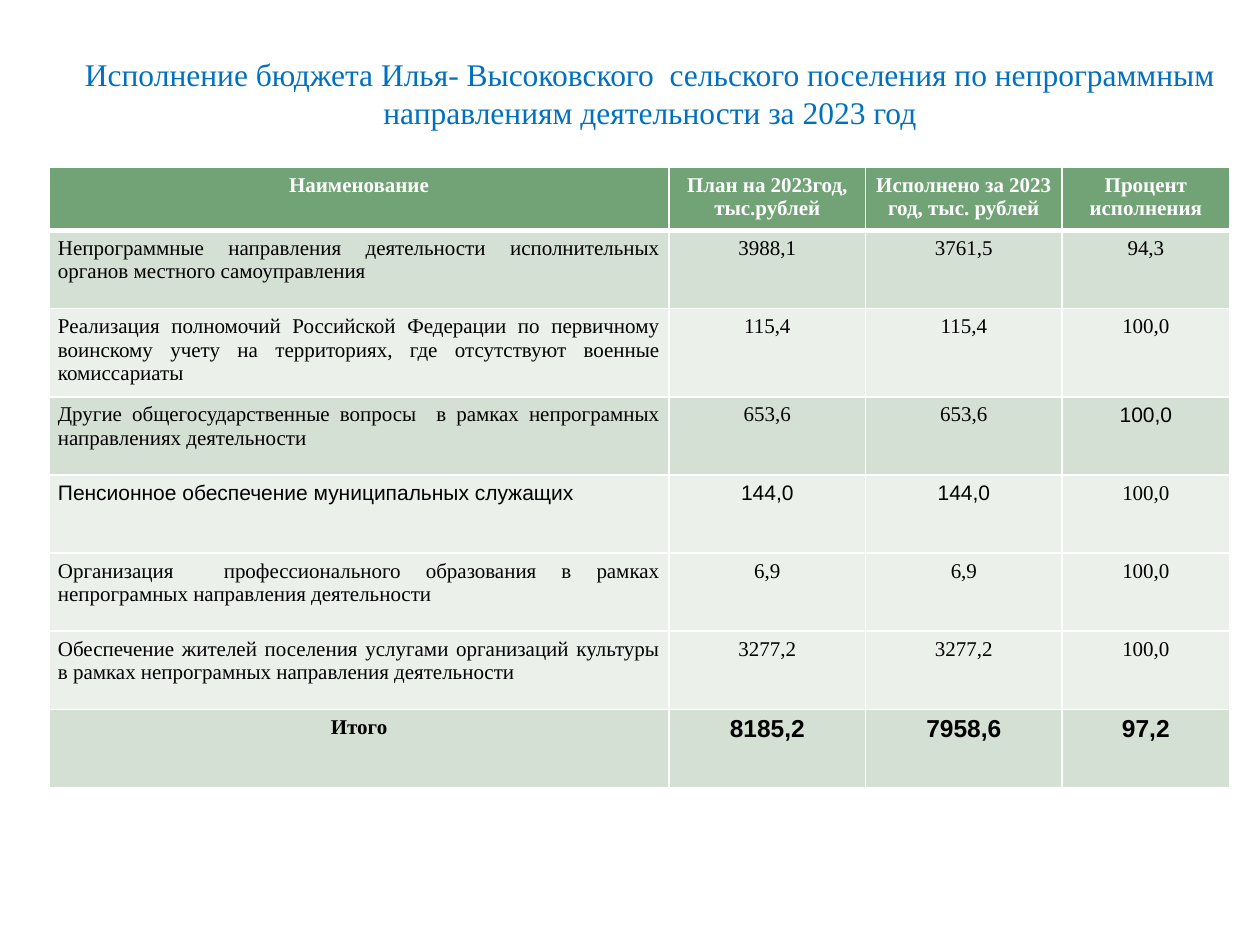
from dataclasses import dataclass

from lxml import etree
from pptx import Presentation
from pptx.dml.color import RGBColor
from pptx.enum.text import MSO_ANCHOR, PP_ALIGN
from pptx.oxml.ns import qn
from pptx.util import Inches, Pt


@dataclass(frozen=True)
class Theme:
    serif: str = "Times New Roman"
    sans: str = "Arial"
    title_size: int = 18
    body_size: int = 12
    total_size: int = 14
    title: str = "0070C0"
    text: str = "000000"
    white: str = "FFFFFF"
    header: str = "72A376"
    dark_band: str = "D5E0D5"
    light_band: str = "EBF0EB"
    grid_width: float = 0.96
    header_rule: float = 3


THEME = Theme()

TITLE = ("Исполнение бюджета Илья- Высоковского  сельского поселения "
         "по непрограммным направлениям деятельности за 2023 год")
HEADER = ("Наименование", "План на 2023год,\nтыс.рублей",
          "Исполнено за 2023 год, тыс. рублей", "Процент исполнения")
ITEMS = [
    ("Непрограммные направления деятельности исполнительных органов "
     "местного самоуправления", "3988,1", "3761,5", "94,3"),
    ("Реализация полномочий Российской Федерации по первичному воинскому учету "
     "на территориях, где отсутствуют военные комиссариаты",
     "115,4", "115,4", "100,0"),
    ("Другие общегосударственные вопросы  в рамках непрограмных "
     "направлениях деятельности", "653,6", "653,6", "100,0"),
    ("Пенсионное обеспечение муниципальных служащих", "144,0", "144,0", "100,0"),
    ("Организация  профессионального образования в рамках непрограмных "
     "направления деятельности ", "6,9", "6,9", "100,0"),
    ("Обеспечение жителей поселения услугами организаций культуры в рамках "
     "непрограмных направления деятельности ", "3277,2", "3277,2", "100,0"),
]
TOTAL = ("Итого", "8185,2", "7958,6", "97,2")
ROWS = [HEADER, *ITEMS, TOTAL]
LAST = len(ROWS) - 1
DARK_ROWS = {1, 3, LAST}
SANS_CELLS = {(3, 3), (4, 0), (4, 1), (4, 2), (LAST, 1), (LAST, 2), (LAST, 3)}

COLUMN_WIDTHS = (4.92, 1.56, 1.56, 1.33)
HEADER_HEIGHT, ROW_HEIGHT = 0.4, 0.62


def write(frame, text, *, size=THEME.body_size, font=THEME.serif,
          color=THEME.text, bold=False, align=PP_ALIGN.CENTER):
    """Fill a text frame, one paragraph for each line of text."""
    frame.word_wrap = True
    for index, line in enumerate(text.split("\n")):
        paragraph = frame.paragraphs[0] if index == 0 else frame.add_paragraph()
        paragraph.alignment = align
        run = paragraph.add_run()
        run.text = line
        run.font.size = Pt(size)
        run.font.name = font
        run.font.bold = bold
        run.font.color.rgb = RGBColor.from_string(color)


def set_borders(cell, top, bottom):
    """Draw white cell borders; they must come before the fill in tcPr."""
    widths = {"lnL": THEME.grid_width, "lnR": THEME.grid_width,
              "lnT": top, "lnB": bottom}
    properties = cell._tc.get_or_add_tcPr()
    for position, (side, width) in enumerate(widths.items()):
        line = etree.Element(qn(f"a:{side}"), w=str(int(Pt(width))))
        fill = etree.SubElement(line, qn("a:solidFill"))
        etree.SubElement(fill, qn("a:srgbClr"), val=THEME.white)
        properties.insert(position, line)


def cell_format(row, column):
    if row == 0:
        return {"color": THEME.white, "bold": True}
    return {
        "font": THEME.sans if (row, column) in SANS_CELLS else THEME.serif,
        "size": THEME.total_size if row == LAST and column else THEME.body_size,
        "bold": row == LAST,
        "align": PP_ALIGN.JUSTIFY if column == 0 and row < LAST else PP_ALIGN.CENTER,
    }


def row_fill(row):
    if row == 0:
        return THEME.header
    return THEME.dark_band if row in DARK_ROWS else THEME.light_band


def add_title(slide):
    title = slide.shapes.add_textbox(
        Inches(0.55), Inches(0.39), Inches(9.22), Inches(0.7))
    title.text_frame.vertical_anchor = MSO_ANCHOR.MIDDLE
    write(title.text_frame, TITLE, size=THEME.title_size, color=THEME.title)


def add_budget_table(slide):
    heights = [HEADER_HEIGHT] + [ROW_HEIGHT] * LAST
    budget = slide.shapes.add_table(
        len(ROWS), len(HEADER), Inches(0.39), Inches(1.33),
        Inches(sum(COLUMN_WIDTHS)), Inches(sum(heights))).table
    for column, width in zip(budget.columns, COLUMN_WIDTHS):
        column.width = Inches(width)
    for row, (texts, height) in enumerate(zip(ROWS, heights)):
        budget.rows[row].height = Inches(height)
        for column, text in enumerate(texts):
            cell = budget.cell(row, column)
            cell.margin_left = cell.margin_right = Inches(0.07)
            cell.margin_top = cell.margin_bottom = Inches(0.05)
            cell.fill.solid()
            cell.fill.fore_color.rgb = RGBColor.from_string(row_fill(row))
            set_borders(cell,
                        top=THEME.header_rule if row == 1 else THEME.grid_width,
                        bottom=THEME.header_rule if row == 0 else THEME.grid_width)
            write(cell.text_frame, text, **cell_format(row, column))


def main():
    deck = Presentation()
    deck.slide_width, deck.slide_height = Inches(10), Inches(7.5)
    slide = deck.slides.add_slide(deck.slide_layouts[6])
    add_title(slide)
    add_budget_table(slide)
    deck.save("out.pptx")


if __name__ == "__main__":
    main()
